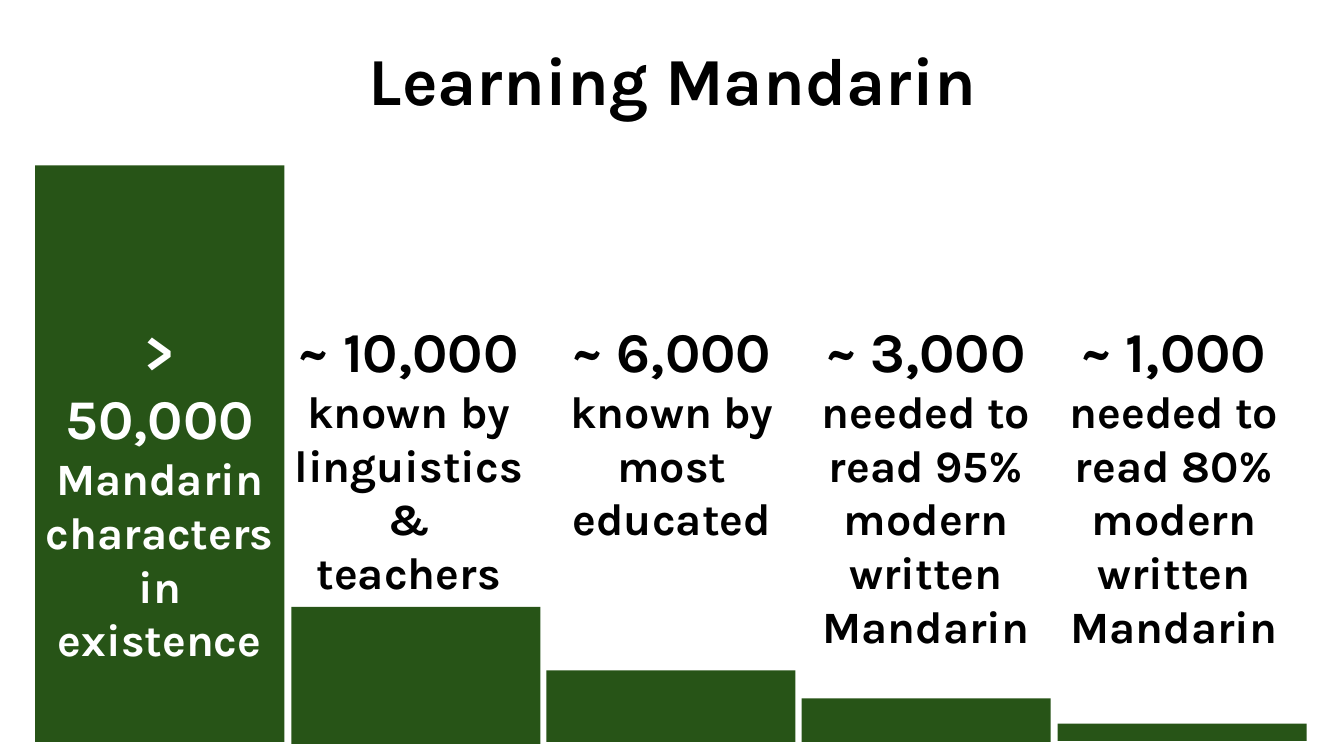
import pptx
import pptx.util
import pptx.dml.color
import pptx.enum.shapes
import pptx.enum.text

PX = 9144
FONT = "Karla"
COLORS = {"bar": "275417", "dark": "000000", "light": "FFFFFF"}
COLUMN_WIDTH = 247
FIRST_LEFT = 35
COLUMN_PITCH = 253.5
LABEL_TOP = 309

# bar top, bar height, label left, label height, label color, count, meaning
LEVELS = [
    (164, 572, 35, 293, "light", "> 50,000", "Mandarin characters in existence"),
    (602, 136, 282, 239, "dark", "~ 10,000", "known by linguistics & teachers"),
    (665, 71, 543, 239, "dark", "~ 6,000", "known by most educated"),
    (693, 43, 795, 347, "dark", "~ 3,000", "needed to read 95% modern written Mandarin"),
    (718, 17, 1041, 347, "dark", "~ 1,000", "needed to read 80% modern written Mandarin"),
]


def px(*lengths):
    return [pptx.util.Emu(length * PX) for length in lengths]


def rgb(name):
    return pptx.dml.color.RGBColor.from_string(COLORS[name])


def add_bar(slide, left, top, height):
    bar = slide.shapes.add_shape(
        pptx.enum.shapes.MSO_SHAPE.RECTANGLE, *px(left, top, COLUMN_WIDTH, height))
    bar.shadow.inherit = False
    bar.fill.solid()
    bar.fill.fore_color.rgb = rgb("bar")
    bar.line.fill.background()


def add_label(slide, left, top, width, height, color, lines):
    frame = slide.shapes.add_textbox(*px(left, top, width, height)).text_frame
    frame.word_wrap = True
    frame.auto_size = pptx.enum.text.MSO_AUTO_SIZE.SHAPE_TO_FIT_TEXT
    frame.text = "\n".join(text for text, size in lines)
    for paragraph, (text, size) in zip(frame.paragraphs, lines):
        paragraph.alignment = pptx.enum.text.PP_ALIGN.CENTER
        font = paragraph.runs[0].font
        font.name = FONT
        font.size = pptx.util.Pt(size)
        font.bold = True
        font.color.rgb = rgb(color)


def main():
    presentation = pptx.Presentation()
    presentation.slide_width, presentation.slide_height = px(1333, 750)
    slide = presentation.slides.add_slide(presentation.slide_layouts[6])

    for column, (bar_top, bar_height, *label) in enumerate(LEVELS):
        add_bar(slide, FIRST_LEFT + round(column * COLUMN_PITCH), bar_top, bar_height)
    for bar_top, bar_height, left, height, color, count, meaning in LEVELS:
        add_label(slide, left, LABEL_TOP, COLUMN_WIDTH, height, color,
                  [(count, 40), (meaning, 32)])
    add_label(slide, 113, 33, 1108, 91, "dark", [("Learning Mandarin", 48)])

    presentation.save("out.pptx")


if __name__ == "__main__":
    main()
